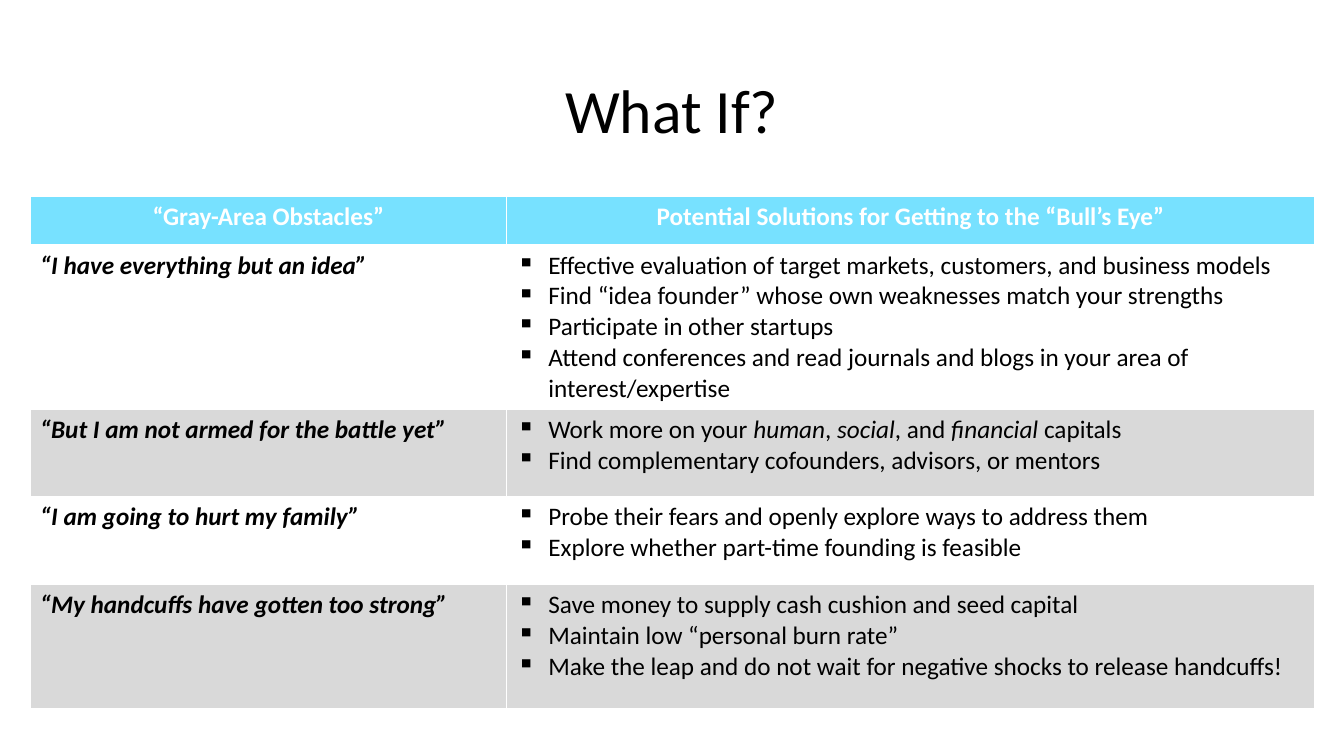
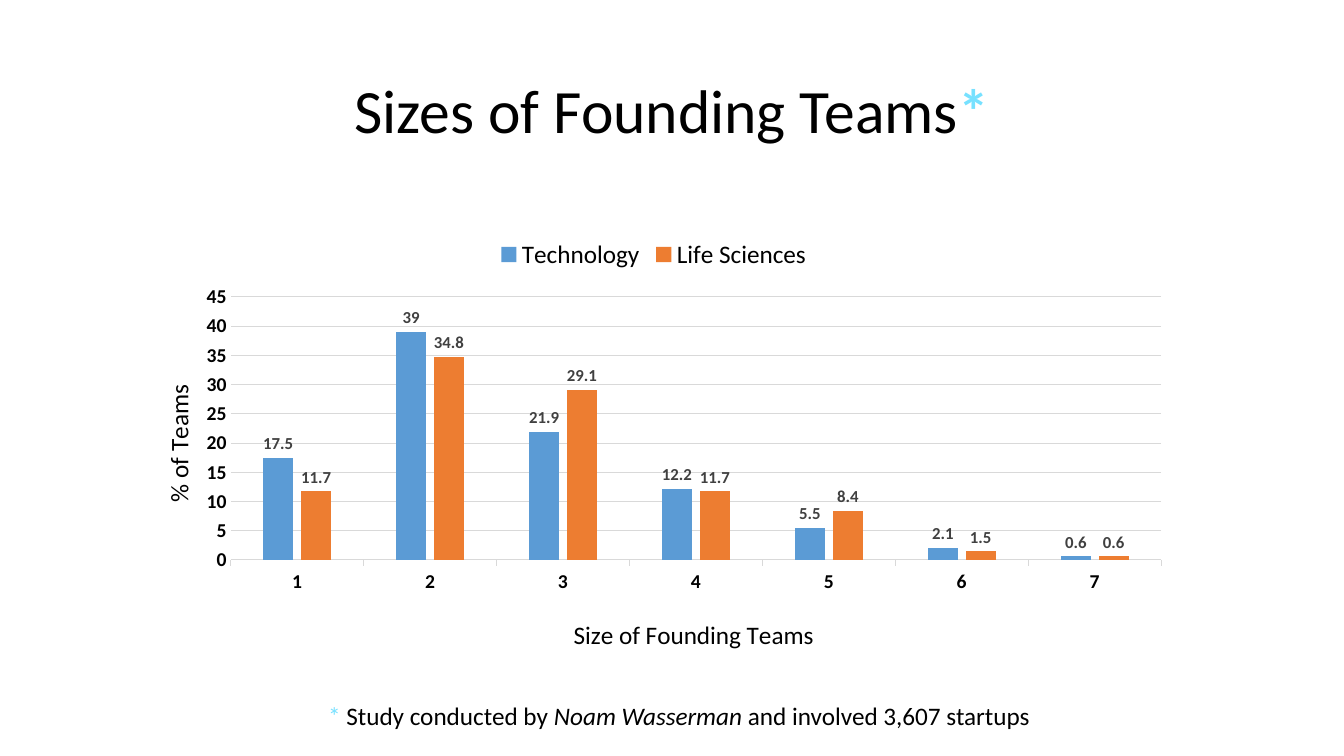
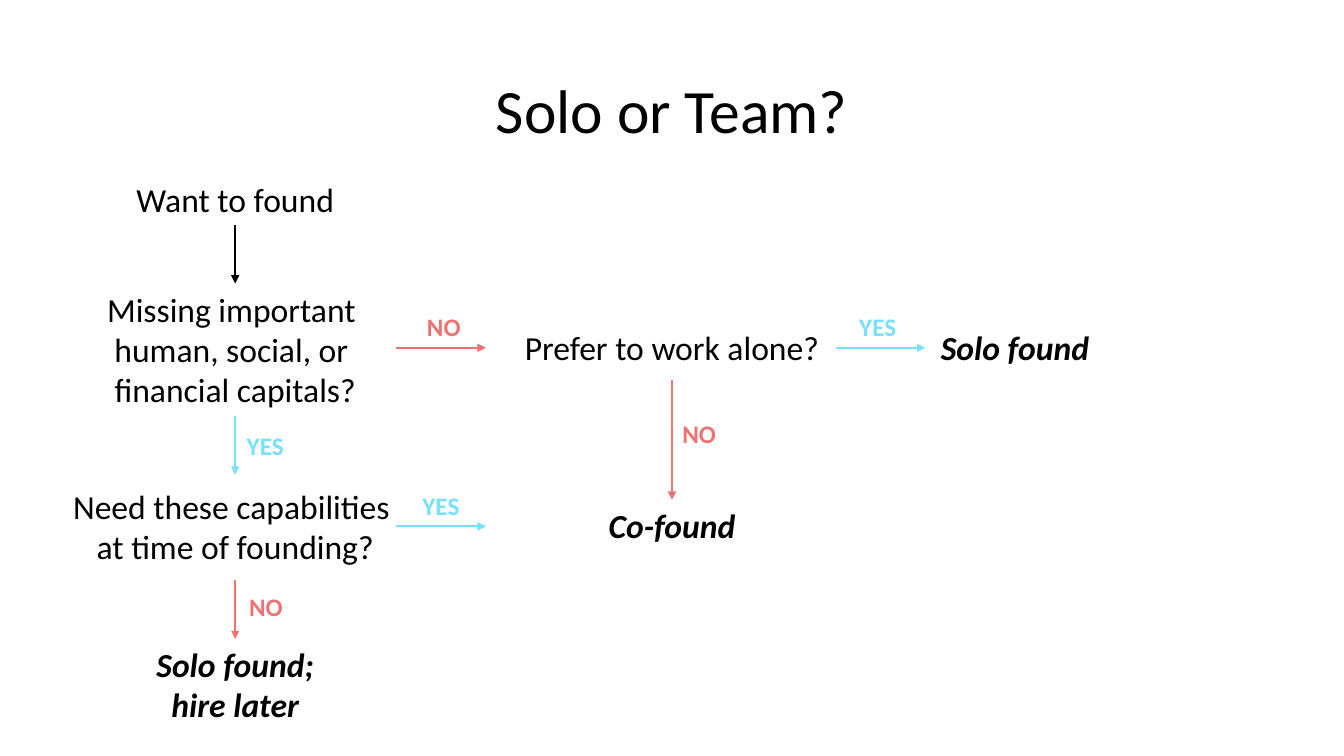
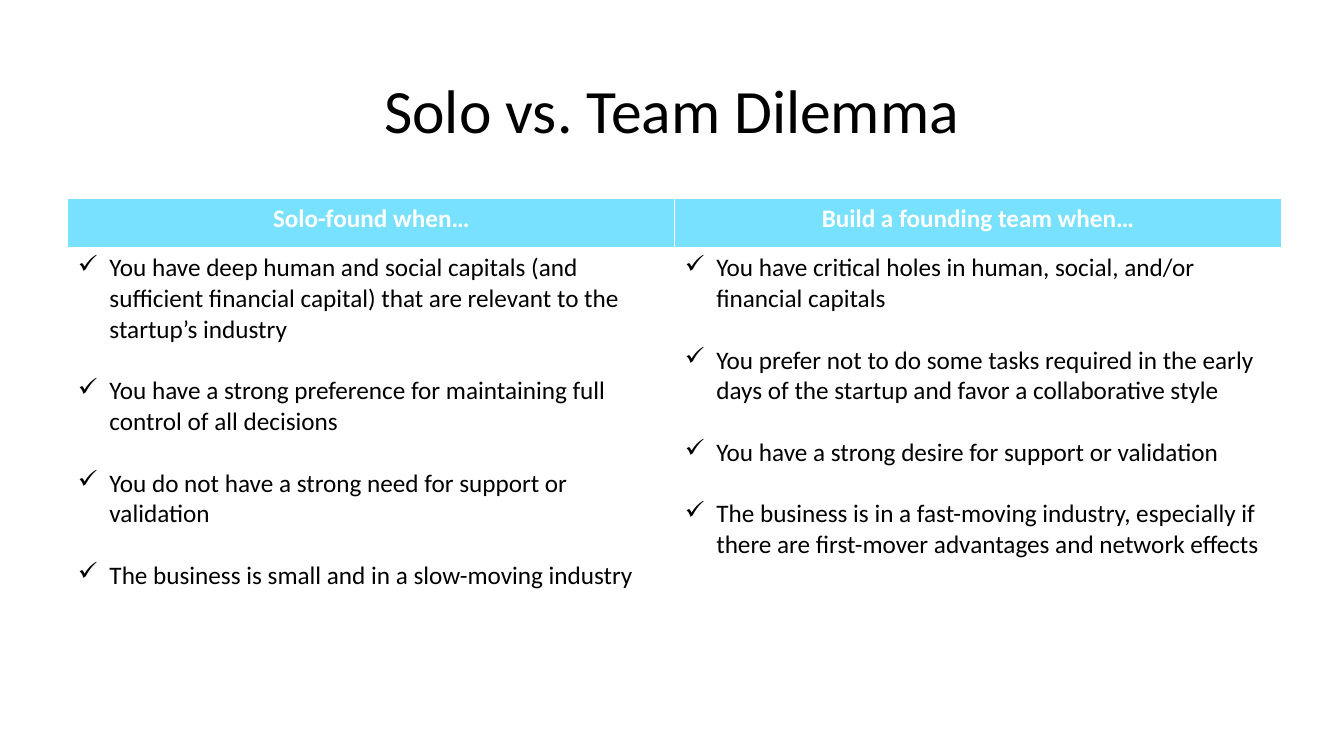
"""Build four slides on founding obstacles, team sizes and the solo-or-team choice."""
from lxml import etree
from pptx import Presentation
from pptx.chart.data import CategoryChartData
from pptx.dml.color import RGBColor
from pptx.enum.chart import XL_CHART_TYPE as CT, XL_LABEL_POSITION as LP
from pptx.enum.chart import XL_LEGEND_POSITION as LEG, XL_TICK_MARK as TM
from pptx.enum.shapes import MSO_CONNECTOR as CONN
from pptx.enum.text import MSO_ANCHOR as ANCHOR, PP_ALIGN as ALIGN
from pptx.oxml.ns import qn
from pptx.util import Pt

FONT = "Calibri"
COLORS = {
    "text": "000000", "white": "FFFFFF", "band": "D9D9D9", "yes": "77E1FF",
    "no": "EF7273", "label": "404040", "tech": "5B9BD5", "life": "ED7D31",
}
BOTTOM, TOP = 2, 0


def rgb(name):
    return RGBColor.from_string(COLORS[name])


def style_font(font, size, color="text", bold=False, italic=False):
    font.name, font.size, font.bold, font.italic = FONT, Pt(size), bold, italic
    font.color.rgb = rgb(color)


def add_runs(p, content, **style):
    parts = [(content, {})] if isinstance(content, str) else content
    for text, changes in parts:
        r = p.add_run()
        r.text = text
        style_font(r.font, **{**style, **changes})


def add_title(slide, content):
    sp = slide.shapes.add_textbox(Pt(66), Pt(28.8), Pt(828), Pt(104.4))
    tf = sp.text_frame
    tf.word_wrap, tf.vertical_anchor = True, ANCHOR.MIDDLE
    p = tf.paragraphs[0]
    p.alignment, p.line_spacing = ALIGN.CENTER, 0.9
    add_runs(p, content, size=44)


def add_note(slide, center, top, width, lines, size=24, **style):
    height = size * 1.215 * len(lines) + 7.2
    sp = slide.shapes.add_textbox(Pt(center - width / 2), Pt(top), Pt(width), Pt(height))
    tf = sp.text_frame
    tf.word_wrap = False
    for i, line in enumerate(lines):
        p = tf.add_paragraph() if i else tf.paragraphs[0]
        p.alignment = ALIGN.CENTER
        add_runs(p, line, size=size, **style)
    return sp


def add_arrow(slide, start, end, color, source=None, target=None):
    line = slide.shapes.add_connector(CONN.STRAIGHT, *map(Pt, start + end))
    if source is not None:
        line.begin_connect(source, BOTTOM)
    if target is not None:
        line.end_connect(target, TOP)
    line.line.width = Pt(1.5)
    line.line.color.rgb = rgb(color)
    etree.SubElement(line.line._get_or_add_ln(), qn("a:tailEnd"), type="triangle")
    etree.SubElement(line._element.spPr, qn("a:effectLst"))


def add_bullet(p, char):
    pPr = p._p.get_or_add_pPr()
    pPr.set("marL", str(Pt(22.5)))
    pPr.set("indent", str(-Pt(22.5)))
    etree.SubElement(pPr, qn("a:buChar"), char=char)


def fill_cell(cell, items, fill, bullet=None, gap=0, align=None, **style):
    cell.fill.solid()
    cell.fill.fore_color.rgb = rgb(fill)
    tf = cell.text_frame
    for i, item in enumerate(items):
        p = tf.add_paragraph() if i else tf.paragraphs[0]
        p.alignment = align
        if i and gap:
            p.space_before = Pt(gap)
        if bullet:
            add_bullet(p, bullet)
        add_runs(p, item, size=18, **style)


def add_table(slide, left, top, widths, heights, headings):
    table = slide.shapes.add_table(
        len(heights), len(widths), Pt(left), Pt(top), Pt(sum(widths)), Pt(sum(heights))).table
    table.horz_banding = False
    for col, width in zip(table.columns, widths):
        col.width = Pt(width)
    for row, height in zip(table.rows, heights):
        row.height = Pt(height)
    for cell, heading in zip(table.rows[0].cells, headings):
        fill_cell(cell, [heading], "yes", align=ALIGN.CENTER, color="white", bold=True)
    return table


def set_layout(parent, index, inner=False, **place):
    for old in parent.findall(qn("c:layout")):
        parent.remove(old)
    layout = etree.Element(qn("c:layout"))
    manual = etree.SubElement(layout, qn("c:manualLayout"))
    if inner:
        etree.SubElement(manual, qn("c:layoutTarget"), val="inner")
    for mode in ("xMode", "yMode"):
        etree.SubElement(manual, qn("c:" + mode), val="edge")
    for key, value in place.items():
        etree.SubElement(manual, qn("c:" + key), val=str(value))
    parent.insert(index, layout)


def style_axis(axis, title, x, y):
    style_font(axis.tick_labels.font, 14, bold=True)
    tf = axis.axis_title.text_frame
    add_runs(tf.paragraphs[0], title, size=18)
    set_layout(axis.axis_title._element, 1, x=x, y=y)
    return tf


def add_team_chart(slide):
    data = CategoryChartData()
    data.categories = [str(n) for n in range(1, 8)]
    data.add_series("Technology", (17.5, 39, 21.9, 12.2, 5.5, 2.1, 0.6))
    data.add_series("Life Sciences", (11.7, 34.8, 29.1, 11.7, 8.4, 1.5, 0.6))
    chart = slide.shapes.add_chart(
        CT.COLUMN_CLUSTERED, Pt(89.3), Pt(162), Pt(755.3), Pt(313.2), data).chart
    style_font(chart.font, 10)
    chart.has_title = False
    chart.has_legend = True
    chart.legend.position, chart.legend.include_in_layout = LEG.TOP, False
    style_font(chart.legend.font, 18)

    plot = chart.plots[0]
    plot.gap_width, plot.overlap, plot.vary_by_categories = 219, -27, False
    for series, color in zip(plot.series, ("tech", "life")):
        series.format.fill.solid()
        series.format.fill.fore_color.rgb = rgb(color)
        labels = series.data_labels
        labels.show_value, labels.position = True, LP.OUTSIDE_END
        style_font(labels.font, 12, "label", bold=True)

    sizes, shares = chart.category_axis, chart.value_axis
    style_axis(sizes, "Size of Founding Teams", 0.42, 0.88)
    tf = style_axis(shares, "% of Teams", 0.03, 0.35)
    tf._txBody.bodyPr.set("rot", "-5400000")
    tf._txBody.bodyPr.set("vert", "horz")
    sizes.major_tick_mark, shares.major_tick_mark = TM.OUTSIDE, TM.NONE
    shares.minimum_scale, shares.maximum_scale, shares.major_unit = 0, 45, 5
    shares.format.line.fill.background()
    for line in (sizes.format.line, shares.major_gridlines.format.line):
        line.color.rgb = rgb("band")
        line.width = Pt(0.75)
    plot_area = chart._chartSpace.find(".//" + qn("c:plotArea"))
    set_layout(plot_area, 0, inner=True, x=0.1, y=0.16, w=0.88, h=0.6)


def build_obstacles(slide):
    add_title(slide, "What If?")
    italic = {"italic": True}
    rows = [
        ("“I have everything but an idea”", [
            "Effective evaluation of target markets, customers, and business models",
            "Find “idea founder” whose own weaknesses match your strengths",
            "Participate in other startups",
            "Attend conferences and read journals and blogs in your area of interest/expertise"]),
        ("“But I am not armed for the battle yet”", [
            [("Work more on your ", {}), ("human", italic), (", ", {}), ("social", italic),
             (", and ", {}), ("financial", italic), (" capitals", {})],
            "Find complementary cofounders, advisors, or mentors"]),
        ("“I am going to hurt my family”", [
            "Probe their fears and openly explore ways to address them",
            "Explore whether part-time founding is feasible"]),
        ("“My handcuffs have gotten too strong”", [
            "Save money to supply cash cushion and seed capital",
            "Maintain low “personal burn rate”",
            "Make the leap and do not wait for negative shocks to release handcuffs!"]),
    ]
    table = add_table(slide, 21.5, 140, (340.5, 577), (35, 117.5, 62, 63, 89),
                      ("“Gray-Area Obstacles”",
                       "Potential Solutions for Getting to the “Bull’s Eye”"))
    for i, (obstacle, solutions) in enumerate(rows, 1):
        fill = "white" if i % 2 else "band"
        fill_cell(table.cell(i, 0), [obstacle], fill, bold=True, italic=True)
        fill_cell(table.cell(i, 1), solutions, fill, bullet="▪")


def build_team_sizes(slide):
    add_title(slide, [("Sizes of Founding Teams", {}), ("*", {"color": "yes", "bold": True})])
    add_team_chart(slide)
    add_note(slide, 485, 497, 518, [[
        ("* ", {"color": "yes"}), ("Study conducted by ", {}),
        ("Noam Wasserman", {"italic": True}), (" and involved 3,607 startups", {})]], size=18)


def build_decision_flow(slide):
    add_title(slide, "Solo or Team?")
    left, middle, right = 168, 480, 725
    upper, lower = 248.4, 376
    ending = {"bold": True, "italic": True}
    want = add_note(slide, left, 124.5, 157, ["Want to found"])
    missing = add_note(slide, left, 202.5, 199,
                       ["Missing important ", "human, social, or ", "financial capitals?"])
    add_note(slide, left, 343.5, 248, ["Need these capabilities ", "at time of founding?"])
    later = add_note(slide, left, 456.5, 128, ["Solo found;", "hire later"], **ending)
    add_note(slide, middle, 229.7, 227, ["Prefer to work alone?"])
    cofound = add_note(slide, middle, 357, 106, ["Co-found"], **ending)
    add_note(slide, right, 229.7, 121, ["Solo found"], **ending)

    add_arrow(slide, (left, 161), (left, 202.5), "text", want, missing)
    add_arrow(slide, (left, 296), (left, 339), "yes", source=missing)
    add_arrow(slide, (left, 414), (left, 456.5), "no", target=later)
    add_arrow(slide, (middle, 271.5), (middle, 357), "no", target=cofound)
    for x, y, color in ((283, upper, "no"), (597, upper, "yes"), (283, lower, "yes")):
        add_arrow(slide, (x, y), (x + 64, y), color)

    for answer, center, top in (("no", 317, 219), ("yes", 627, 219), ("yes", 315, 347),
                                ("yes", 189.5, 304), ("no", 190, 419), ("no", 499.5, 295)):
        add_note(slide, center, top, 41, [answer.upper()], size=18, color=answer, bold=True)


def build_dilemma(slide):
    add_title(slide, "Solo vs. Team Dilemma")
    reasons = [
        ["You have deep human and social capitals (and sufficient financial capital) "
         "that are relevant to the startup’s industry",
         "You have a strong preference for maintaining full control of all decisions",
         "You do not have a strong need for support or validation",
         "The business is small and in a slow-moving industry"],
        ["You have critical holes in human, social, and/or financial capitals",
         "You prefer not to do some tasks required in the early days of the startup "
         "and favor a collaborative style",
         "You have a strong desire for support or validation",
         "The business is in a fast-moving industry, especially if there are "
         "first-mover advantages and network effects"],
    ]
    table = add_table(slide, 48.5, 142, (433.5, 433.5), (35, 274),
                      ("Solo-found when…", "Build a founding team when…"))
    for cell, items in zip(table.rows[1].cells, reasons):
        fill_cell(cell, items, "white", bullet="✓", gap=22)


def main():
    prs = Presentation()
    prs.slide_width, prs.slide_height = Pt(960), Pt(540)
    for build in (build_obstacles, build_team_sizes, build_decision_flow, build_dilemma):
        build(prs.slides.add_slide(prs.slide_layouts[6]))
    prs.save("out.pptx")


if __name__ == "__main__":
    main()
